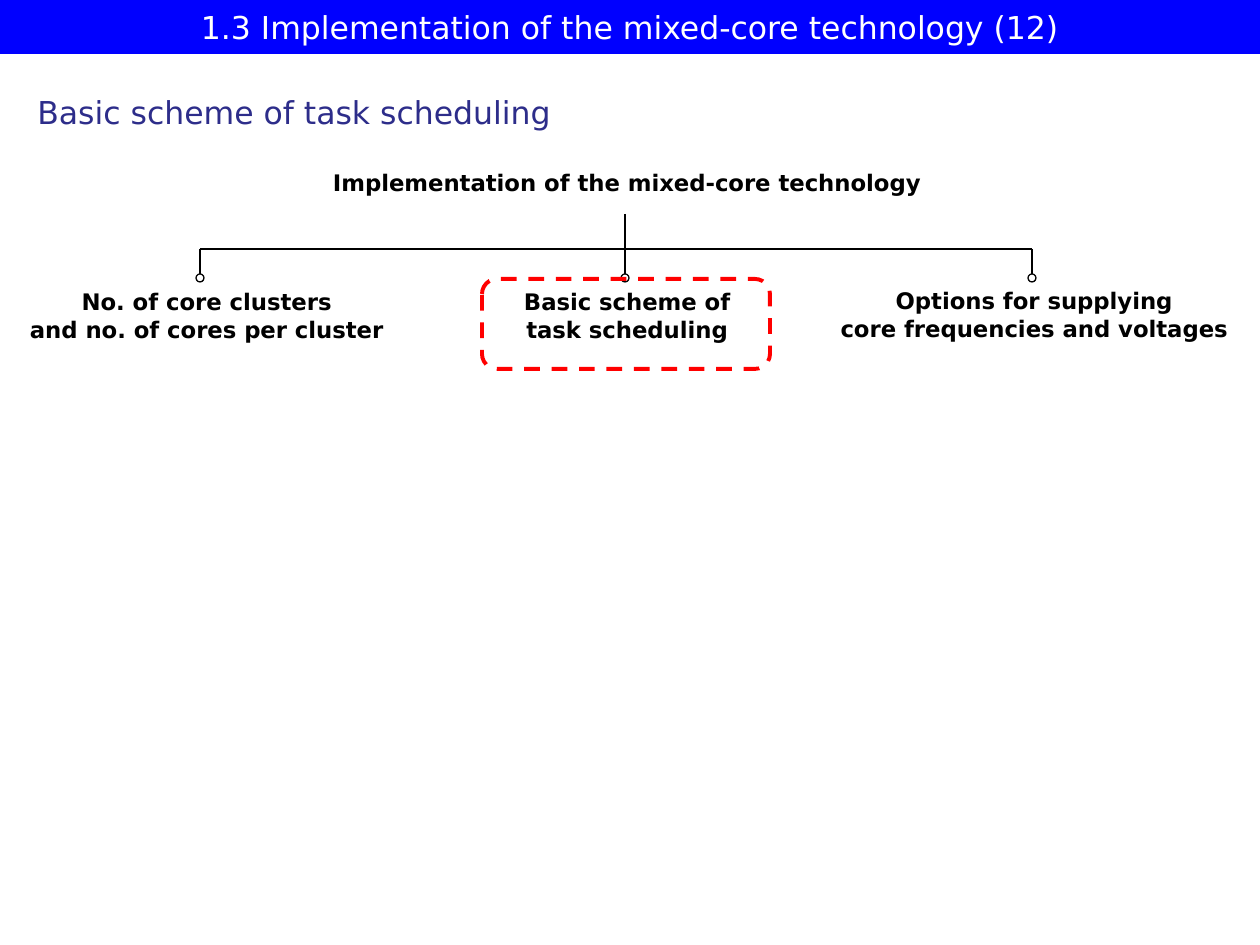
from dataclasses import dataclass

from lxml.etree import SubElement
from pptx import Presentation
from pptx.dml.color import RGBColor
from pptx.enum.dml import MSO_LINE_DASH_STYLE as Dash
from pptx.enum.shapes import MSO_CONNECTOR as Connector, MSO_SHAPE as Preset
from pptx.enum.text import MSO_ANCHOR as Anchor, PP_ALIGN as Align
from pptx.oxml.ns import qn
from pptx.util import Pt


@dataclass(frozen=True)
class Theme:
    font: str = "DejaVu Sans"
    black: RGBColor = RGBColor(0, 0, 0)
    white: RGBColor = RGBColor(255, 255, 255)
    banner: RGBColor = RGBColor(0, 0, 255)
    heading: RGBColor = RGBColor(0x2D, 0x2D, 0x8A)
    highlight: RGBColor = RGBColor(255, 0, 0)
    title_size: int = 18
    label_size: int = 13
    line_width: float = 0.75
    highlight_width: float = 2.25


@dataclass(frozen=True)
class Box:
    left: int
    top: int
    width: int
    height: int


@dataclass(frozen=True)
class Branch:
    axis: int
    label: Box
    lines: tuple[str, ...]


THEME = Theme()
PX_PER_INCH = 126
BAR_Y = 249
NODE_TOP = 274
NODE_SIZE = 8

BRANCHES = (
    Branch(200, Box(0, 282, 413, 68),
           ("No. of core clusters", "and no. of cores per cluster")),
    Branch(625, Box(407, 282, 440, 68),
           ("Basic scheme of", "task scheduling")),
    Branch(1032, Box(821, 281, 426, 68),
           ("Options for supplying", "core frequencies and voltages")),
)


def px(value: int) -> int:
    return round(value * 914400 / PX_PER_INCH)


def place(box: Box) -> tuple[int, ...]:
    return tuple(px(v) for v in (box.left, box.top, box.width, box.height))


def write(shape, lines: tuple[str, ...], size: int, color: RGBColor,
          bold: bool = False, align=Align.CENTER, wrap: bool = True) -> None:
    frame = shape.text_frame
    frame.word_wrap = wrap
    for index, line in enumerate(lines):
        paragraph = frame.add_paragraph() if index else frame.paragraphs[0]
        paragraph.alignment = align
        run = paragraph.add_run()
        run.text = line
        run.font.name = THEME.font
        run.font.size = Pt(size)
        run.font.bold = bold
        run.font.color.rgb = color


def add_label(slide, box: Box, lines: tuple[str, ...], **style) -> None:
    write(slide.shapes.add_textbox(*place(box)), lines, **style)


def add_preset(slide, preset, box: Box, fill: RGBColor | None = None,
               line: RGBColor | None = None, width: float = 0):
    shape = slide.shapes.add_shape(preset, *place(box))
    shape.shadow.inherit = False
    if fill is None:
        shape.fill.background()
    else:
        shape.fill.solid()
        shape.fill.fore_color.rgb = fill
    if line is None:
        shape.line.fill.background()
    else:
        shape.line.color.rgb = line
        shape.line.width = Pt(width)
    return shape


def add_line(slide, x1: int, y1: int, x2: int, y2: int):
    line = slide.shapes.add_connector(
        Connector.STRAIGHT, px(x1), px(y1), px(x2), px(y2))
    line.line.color.rgb = THEME.black
    line.line.width = Pt(THEME.line_width)
    SubElement(line._element.spPr, qn("a:effectLst"))
    return line


def add_branch(slide, branch: Branch) -> None:
    node = add_preset(
        slide, Preset.OVAL,
        Box(branch.axis - NODE_SIZE // 2, NODE_TOP, NODE_SIZE, NODE_SIZE),
        THEME.white, THEME.black)
    drop = add_line(slide, branch.axis, BAR_Y, branch.axis, NODE_TOP)
    drop.end_connect(node, 0)
    add_label(slide, branch.label, branch.lines, size=THEME.label_size,
              color=THEME.black, bold=True)


def main() -> None:
    presentation = Presentation()
    presentation.slide_width, presentation.slide_height = px(1260), px(945)
    slide = presentation.slides.add_slide(presentation.slide_layouts[6])

    # Title banner and heading
    banner = add_preset(slide, Preset.RECTANGLE, Box(0, 0, 1260, 54), THEME.banner)
    banner.text_frame.vertical_anchor = Anchor.MIDDLE
    write(banner, ("1.3 Implementation of the mixed-core technology (12)",),
          THEME.title_size, THEME.white)
    add_label(slide, Box(25, 87, 543, 50), ("Basic scheme of task scheduling",),
              size=THEME.title_size, color=THEME.heading,
              align=Align.LEFT, wrap=False)

    # Root of the tree
    add_label(slide, Box(319, 163, 615, 40),
              ("Implementation of the mixed-core technology",),
              size=THEME.label_size, color=THEME.black, bold=True, wrap=False)
    trunk = BRANCHES[1].axis
    add_line(slide, trunk, 214, trunk, BAR_Y)
    add_line(slide, BRANCHES[0].axis, BAR_Y, BRANCHES[-1].axis, BAR_Y)

    # Branches
    for branch in BRANCHES:
        add_branch(slide, branch)

    # Highlight around the current topic
    highlight = add_preset(slide, Preset.ROUNDED_RECTANGLE, Box(482, 279, 288, 90),
                           line=THEME.highlight, width=THEME.highlight_width)
    highlight.line.dash_style = Dash.DASH

    presentation.save("out.pptx")


if __name__ == "__main__":
    main()
